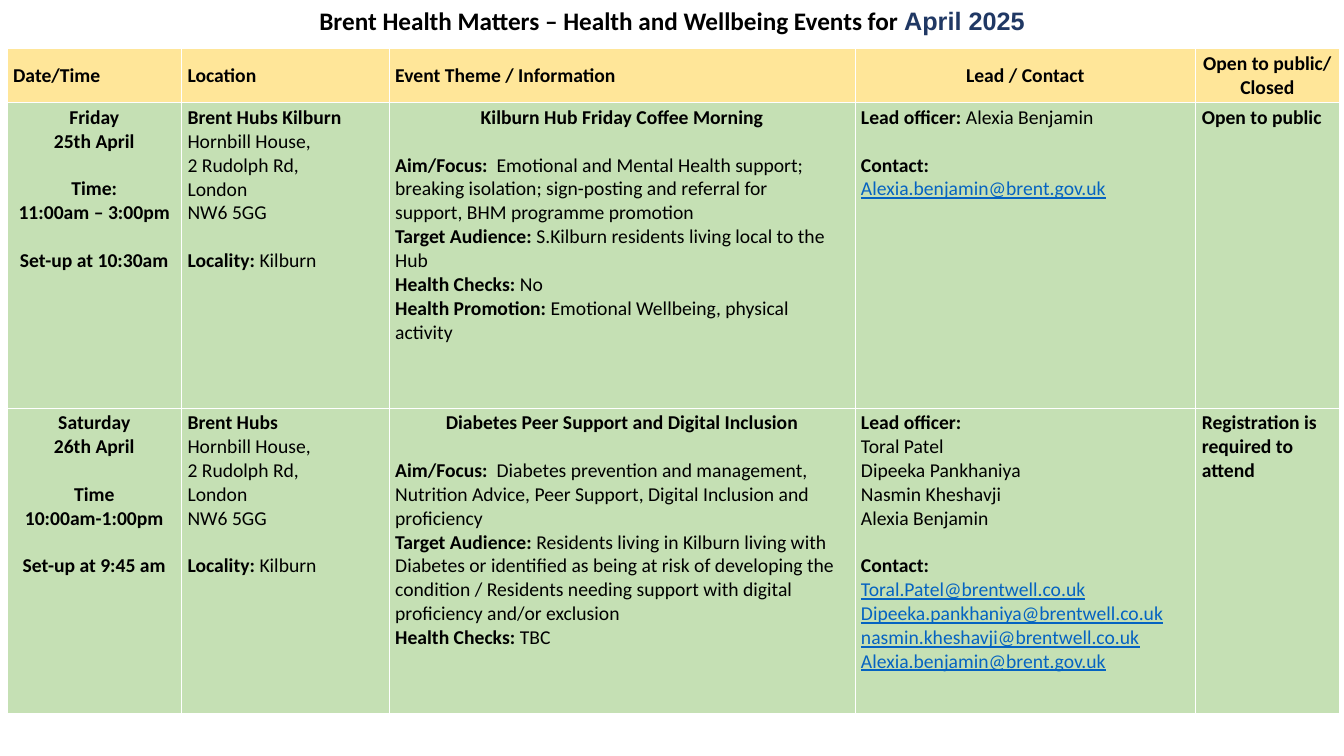
from lxml import etree
from pptx import Presentation
from pptx import util as u
from pptx.dml.color import RGBColor
from pptx.enum import text
from pptx.oxml.ns import qn

PX = 9144  # 100 px to the inch
LINE = 17  # height in points of one line of body text
BLACK, NAVY, BLUE, WHITE = "000000", "203864", "0563C1", "FFFFFF"
YELLOW, GREEN = "FFE699", "C5E0B4"
LEFT, CENTER = text.PP_ALIGN.LEFT, text.PP_ALIGN.CENTER
TOP, MIDDLE = text.MSO_ANCHOR.TOP, text.MSO_ANCHOR.MIDDLE


def px(length):
    return u.Emu(length * PX)


def color(value):
    return RGBColor.from_string(value)


def add_run(paragraph, words, size=14, font="Calibri", fill=BLACK, bold=False, underline=False):
    run = paragraph.add_run()
    run.text = words
    run.font.size, run.font.name = u.Pt(size), font
    run.font.bold, run.font.underline = bold, underline
    run.font.color.rgb = color(fill)


class EventSlide:
    def __init__(self, width, height):
        self.presentation = Presentation()
        self.presentation.slide_width = px(width)
        self.presentation.slide_height = px(height)
        self.slide = self.presentation.slides.add_slide(self.presentation.slide_layouts[5])

    def title(self, x, y, width, height, runs):
        shape = self.slide.shapes.title
        shape.left, shape.top, shape.width, shape.height = map(px, (x, y, width, height))
        frame = shape.text_frame
        frame.word_wrap, frame.vertical_anchor = True, TOP
        frame.auto_size = text.MSO_AUTO_SIZE.NONE
        paragraph = frame.paragraphs[0]
        paragraph.alignment, paragraph.line_spacing = CENTER, 1.0
        for words, style in runs:
            add_run(paragraph, words, size=18, bold=True, **style)

    def border(self, cell):
        properties = cell._tc.get_or_add_tcPr()
        for index, side in enumerate(("lnL", "lnR", "lnT", "lnB")):
            line = etree.Element(qn("a:" + side), w=str(u.Pt(0.5)))
            fill = etree.SubElement(line, qn("a:solidFill"))
            etree.SubElement(fill, qn("a:srgbClr"), val=WHITE)
            properties.insert(index, line)

    def cell(self, cell, lines, fill, anchor):
        """Fill one cell: ** marks bold, > centres a line, an empty line is a gap."""
        cell.fill.solid()
        cell.fill.fore_color.rgb = color(fill)
        self.border(cell)
        cell.vertical_anchor = anchor
        cell.margin_left = cell.margin_right = px(6)
        cell.margin_top = cell.margin_bottom = px(3)
        frame = cell.text_frame
        paragraph, gap = frame.paragraphs[0], False
        for index, line in enumerate(lines):
            if not line:
                gap = True
                continue
            if index:
                paragraph = frame.add_paragraph()
            paragraph.alignment = CENTER if line.startswith(">") else LEFT
            paragraph.space_before = u.Pt(LINE if gap else 0)
            gap = False
            link = "@" in line
            for part, words in enumerate(line.lstrip(">").split("**")):
                if words:
                    add_run(paragraph, words, bold=part % 2 == 1,
                            fill=BLUE if link else BLACK, underline=link)

    def table(self, x, y, columns, heights, rows):
        frame = self.slide.shapes.add_table(len(rows), len(columns), px(x), px(y),
                                            px(sum(columns)), px(sum(heights)))
        table = frame.table
        table.first_row = table.horz_banding = False
        for column, width in zip(table.columns, columns):
            column.width = px(width)
        for index, (row, height) in enumerate(zip(rows, heights)):
            table.rows[index].height = px(height)
            fill, anchor = (GREEN, TOP) if index else (YELLOW, MIDDLE)
            for number, lines in enumerate(row):
                self.cell(table.cell(index, number), lines, fill, anchor)

    def save(self):
        self.presentation.save("out.pptx")


def when(day, date, label, hours, setup):
    return [f">**{day}**", f">**{date}**", "", f">**{label}**", f">**{hours}**", "",
            f">**Set-up at {setup}**"]


def where(hub):
    return [f"**{hub}**", "Hornbill House,", "2 Rudolph Rd,", "London", "NW6 5GG", "",
            "**Locality:** Kilburn"]


HEADER = [["**Date/Time**"], ["**Location**"], ["**Event Theme / Information**"],
          [">**Lead / Contact**"], [">**Open to public/ Closed**"]]

COFFEE_MORNING = [
    when("Friday", "25th April", "Time:", "11:00am – 3:00pm", "10:30am"),
    where("Brent Hubs Kilburn"),
    [">**Kilburn Hub Friday Coffee Morning**", "",
     "**Aim/Focus:  **Emotional and Mental Health support;",
     "breaking isolation; sign-posting and referral for",
     "support, BHM programme promotion",
     "**Target Audience:** S.Kilburn residents living local to the Hub",
     "**Health Checks:** No",
     "**Health Promotion:** Emotional Wellbeing, physical activity"],
    ["**Lead officer:** Alexia Benjamin", "", "**Contact:**", "Alexia.benjamin@brent.gov.uk"],
    ["**Open to public**"],
]

DIABETES_SUPPORT = [
    when("Saturday", "26th April", "Time", "10:00am-1:00pm", "9:45 am"),
    where("Brent Hubs"),
    [">**Diabetes Peer Support and Digital Inclusion**", "",
     "**Aim/Focus:  **Diabetes prevention and management, Nutrition Advice, "
     "Peer Support, Digital Inclusion and proficiency",
     "**Target Audience:** Residents living in Kilburn living with Diabetes or identified "
     "as being at risk of developing the condition / Residents needing support with "
     "digital proficiency and/or exclusion",
     "**Health Checks:** TBC"],
    ["**Lead officer:**", "Toral Patel", "Dipeeka Pankhaniya", "Nasmin Kheshavji",
     "Alexia Benjamin", "", "**Contact:**", "Toral.Patel@brentwell.co.uk",
     "Dipeeka.pankhaniya@brentwell.co.uk", "nasmin.kheshavji@brentwell.co.uk",
     "Alexia.benjamin@brent.gov.uk"],
    ["**Registration is required to attend**"],
]


def main():
    events = EventSlide(1333, 750)
    # Heading
    events.title(0, 0, 1333, 61, [
        ("Brent Health Matters – Health and Wellbeing Events for ", {}),
        ("April 2025", {"font": "Arial", "fill": NAVY}),
    ])
    # Events table
    events.table(7, 48, columns=[173, 206, 462, 338, 142], heights=[54, 303, 303],
                 rows=[HEADER, COFFEE_MORNING, DIABETES_SUPPORT])
    events.save()


if __name__ == "__main__":
    main()
